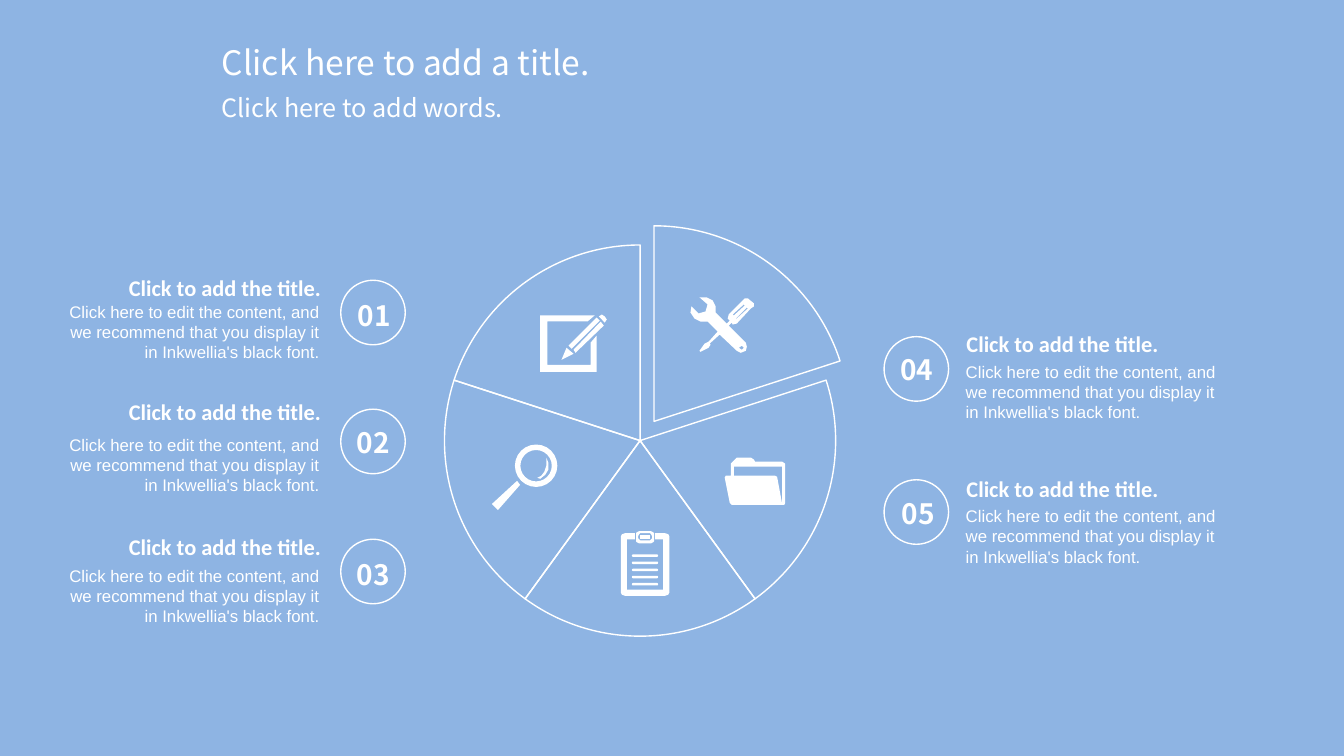
from pptx import Presentation
from pptx.dml.color import RGBColor
from pptx.enum.shapes import MSO_SHAPE
from pptx.enum.text import MSO_ANCHOR, PP_ALIGN
from pptx.util import Pt

PIE, OVAL, DONUT = MSO_SHAPE.PIE, MSO_SHAPE.OVAL, MSO_SHAPE.DONUT
ROUNDED = MSO_SHAPE.ROUNDED_RECTANGLE
TOP, MIDDLE = MSO_ANCHOR.TOP, MSO_ANCHOR.MIDDLE
LEFT, CENTER, RIGHT = PP_ALIGN.LEFT, PP_ALIGN.CENTER, PP_ALIGN.RIGHT
WHITE = RGBColor.from_string("FFFFFF")
BACKGROUND = RGBColor.from_string("8EB4E3")
HEADING_FONT = "Noto Sans CJK SC"
ICON_UNIT = Pt(0.72)
BODY = ("Click here to edit the content, and we recommend that you "
        "display it in Inkwellia's black font.")


def write(box, place, text, font, size, align=LEFT, anchor=TOP, bold=False, inset=True):
    box.left, box.top, box.width, box.height = [Pt(value) for value in place]
    frame = box.text_frame
    frame.word_wrap = True
    frame.vertical_anchor = anchor
    frame.margin_left = frame.margin_right = Pt(7.2 if inset else 0)
    frame.margin_top = frame.margin_bottom = Pt(3.6 if inset else 0)
    para = frame.paragraphs[0]
    para.alignment = align
    span = para.add_run()
    span.text = text
    span.font.name, span.font.size, span.font.bold = font, Pt(size), bold
    span.font.color.rgb = WHITE
    return span


def draw_outline(group, *contours):
    first, *holes = contours
    builder = group.shapes.build_freeform(*first[0], scale=ICON_UNIT)
    builder.add_line_segments(first[1:], close=True)
    for hole in holes:
        builder.move_to(*hole[0])
        builder.add_line_segments(hole[1:], close=True)
    return builder.convert_to_shape()


deck = Presentation()
deck.slide_width, deck.slide_height = Pt(960), Pt(540)
page = deck.slides.add_slide(deck.slide_layouts[5])
page.background.fill.solid()
page.background.fill.fore_color.rgb = BACKGROUND

write(page.shapes.title, (151.2, 26.6, 285.8, 36), "Click here to add a title.", HEADING_FONT, 24)
write(page.shapes.add_textbox(0, 0, 0, 0), (151.2, 62.6, 285.8, 28.8),
      "Click here to add words.", HEADING_FONT, 18)

outlined = []
for index in range(5):
    shift_x, shift_y = (10, -13.7) if index == 0 else (0, 0)
    slice_shape = page.shapes.add_shape(PIE, Pt(317.5 + shift_x), Pt(175 + shift_y), Pt(279.4), Pt(279.4))
    start = 270 + 72 * index
    slice_shape.adjustments[0] = start % 360 * 0.6
    slice_shape.adjustments[1] = (start + 72) % 360 * 0.6
    outlined.append(slice_shape)

entries = [
    ("01", RIGHT, 200.2, 205.5, 215.3, 252.7, 213.1),
    ("02", RIGHT, 292.3, 294.1, 310.3, 252, 303.8),
    ("03", RIGHT, 385.2, 390.2, 403.9, 252, 398.2),
    ("04", LEFT, 240.5, 245.1, 258.5, 640.1, 252),
    ("05", LEFT, 342.7, 348.9, 361.4, 641.5, 355),
]
for number, align, ring_top, heading_middle, body_top, number_left, number_top in entries:
    ring_left, heading_left, body_left, body_width = (
        (243.4, 45.4, 45.4, 182.9) if align == RIGHT else (631.5, 683.3, 689.8, 185.8))
    outlined.append(page.shapes.add_shape(OVAL, Pt(ring_left), Pt(ring_top), Pt(46.1), Pt(46.1)))
    write(page.shapes.add_textbox(0, 0, 0, 0), (heading_left, heading_middle - 13, 191, 26),
          "Click to add the title.", "Calibri", 16, align, MIDDLE, True)
    write(page.shapes.add_textbox(0, 0, 0, 0), (body_left, body_top, body_width, 28.8),
          BODY, "Arial", 12, align, inset=False)
    span = write(page.shapes.add_textbox(0, 0, 0, 0), (number_left, number_top, 29.5, 24.5),
                 number, HEADING_FONT, 20, CENTER, bold=True, inset=False)
    span._r.get_or_add_rPr().set("spc", "30")

for shape in outlined:
    shape.shadow.inherit = False
    shape.fill.background()
    shape.line.color.rgb = WHITE
    shape.line.width = Pt(1)

tools = page.shapes.add_group_shape()
draw_outline(
    tools,
    [(748, 301), (742, 296), (739, 296), (737, 298), (723, 312), (722, 316), (724, 318),
     (721, 321), (710, 310), (710, 304), (707, 298), (701, 295), (694, 295), (702, 302),
     (700, 309), (693, 311), (686, 304), (685, 310), (689, 316), (695, 319), (702, 319),
     (712, 329), (703, 339), (699, 341), (694, 348), (695, 349), (703, 345), (705, 342),
     (704, 341), (714, 332), (731, 348), (735, 350), (740, 348), (741, 344), (740, 340),
     (723, 323), (726, 320), (727, 322), (731, 321), (745, 306), (748, 304)],
    [(736, 343), (738, 345), (736, 347), (733, 345)],
    [(728, 313), (727, 312), (738, 302), (739, 303)],
    [(731, 316), (730, 316), (741, 305), (742, 306)])

folder = page.shapes.add_group_shape()
draw_outline(
    folder,
    [(779, 499), (779, 460), (776, 458), (749, 458), (748, 456), (745, 454), (731, 454),
     (729, 456), (727, 458), (725, 460), (725, 472), (720, 472), (719, 474), (724, 499),
     (726, 501), (778, 501)],
    [(776, 475), (776, 500), (771, 473), (769, 472), (728, 472), (728, 463), (776, 463)])

notepad = page.shapes.add_group_shape()
for contour in (
    [(569, 351), (562, 345), (557, 357)],
    [(592, 315), (564, 343), (567, 346), (595, 318)],
    [(569, 347), (571, 350), (599, 323), (596, 319)],
    [(594, 314), (597, 312), (600, 314), (602, 317), (600, 320)],
    [(586, 362), (543, 362), (543, 319), (583, 319), (590, 313), (536, 313),
     (536, 369), (592, 369), (592, 333), (586, 340)],
):
    draw_outline(notepad, contour)

clipboard = page.shapes.add_group_shape()
draw_outline(
    clipboard,
    [(660, 529), (650, 529), (650, 535), (658, 535), (658, 585), (622, 585), (622, 535),
     (630, 535), (630, 529), (620, 529), (617, 530), (616, 532), (616, 588), (617, 590),
     (620, 591), (660, 591), (663, 590), (664, 588), (664, 532), (663, 530)])
draw_outline(
    clipboard,
    [(634, 539), (646, 539), (648, 538), (649, 537), (649, 529), (648, 528), (646, 527),
     (634, 527), (632, 528), (631, 529), (631, 537), (632, 538)],
    [(633, 532), (634, 530), (635, 529), (645, 529), (646, 530), (647, 532), (647, 534),
     (646, 535), (645, 536), (635, 536), (634, 535), (633, 534)])
draw_outline(clipboard, [(635, 531), (645, 531), (645, 535), (635, 535)])
for row in range(5):
    text_line = clipboard.shapes.add_shape(ROUNDED, Pt(451.4), Pt(396 + 5.1 * row), Pt(18.7), Pt(1.8))
    text_line.adjustments[0] = 0.5

magnifier = page.shapes.add_group_shape()
lens = magnifier.shapes.add_shape(DONUT, Pt(367.8), Pt(317.5), Pt(30.3), Pt(30.3))
lens.adjustments[0] = 0.13
draw_outline(magnifier, [(488, 500), (494, 506), (516, 481), (513, 477)])
draw_outline(magnifier, [(542, 454), (542, 462), (540, 468), (537, 472), (533, 474),
                         (536, 475), (541, 471), (544, 466), (544, 459)])

for icon in (tools, folder, notepad, clipboard, magnifier):
    for part in icon.shapes:
        part.shadow.inherit = False
        part.fill.solid()
        part.fill.fore_color.rgb = WHITE
        part.line.fill.background()

deck.save("out.pptx")
